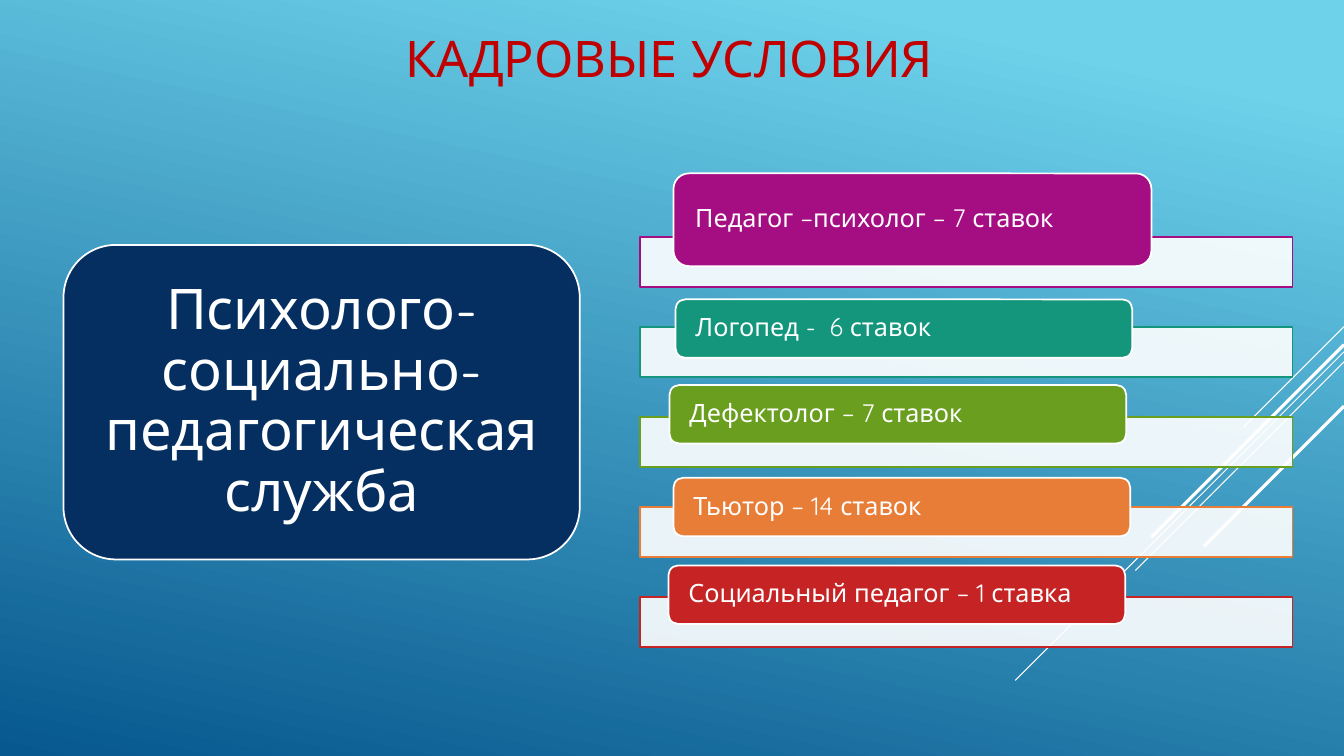
from lxml import etree
from pptx import Presentation
from pptx.dml.color import RGBColor
from pptx.enum.shapes import MSO_CONNECTOR, MSO_SHAPE
from pptx.enum.text import MSO_ANCHOR, PP_ALIGN
from pptx.oxml.ns import qn
from pptx.util import Inches, Pt

STRAIGHT = MSO_CONNECTOR.STRAIGHT
RECTANGLE, ROUNDED = MSO_SHAPE.RECTANGLE, MSO_SHAPE.ROUNDED_RECTANGLE
MIDDLE = MSO_ANCHOR.MIDDLE
LEFT, CENTER = PP_ALIGN.LEFT, PP_ALIGN.CENTER

FONT = "Quicksand"
WHITE, NAVY, TITLE_RED = "FFFFFF", "052F61", "C00000"
SLIDE_WIDTH, SLIDE_HEIGHT = 13.33, 7.5
GRADIENT = [(0.1, "6ED2EB"), (1, "06588E")]
GRADIENT_ANGLE = 258

TITLE = "КАДРОВЫЕ УСЛОВИЯ"
SERVICE = "Психолого-социально-педагогическая служба"
# text, colour, left, top, width, height of the label
STAFF = [
    ("Педагог –психолог – 7 ставок", "A50E82", 6.68, 1.72, 4.74, 0.92),
    ("Логопед -  6 ставок", "14967C", 6.7, 2.97, 4.53, 0.58),
    ("Дефектолог – 7 ставок", "6A9E1F", 6.64, 3.82, 4.53, 0.58),
    ("Тьютор – 14 ставок", "E87D37", 6.68, 4.74, 4.53, 0.58),
    ("Социальный педагог – 1 ставка", "C62324", 6.63, 5.61, 4.53, 0.58),
]
BAR_LEFT, BAR_WIDTH, BAR_HEIGHT = 6.35, 6.47, 0.5
FIRST_BAR, LAST_BAR = 2.35, 5.92
# start height at the right edge, horizontal run, line width
RAYS = [
    (3.24, 1, 0.75),
    (3.49, 3.26, 0.75),
    (3.59, 2.07, 0.75),
    (3.42, 1.91, 2.25),
    (4.03, 1.39, 2.25),
]


def color(value):
    return RGBColor.from_string(value)


def write(frame, text, size, ink, align, inset, line_spacing=0.9):
    frame_format = {"word_wrap": True, "vertical_anchor": MIDDLE,
                    "margin_left": Inches(inset), "margin_right": Inches(inset),
                    "margin_top": 0, "margin_bottom": 0}
    for name, value in frame_format.items():
        setattr(frame, name, value)
    para = frame.paragraphs[0]
    para.alignment = align
    para.line_spacing = line_spacing
    span = para.add_run()
    span.text = text
    for name, value in {"name": FONT, "size": Pt(size), "bold": False}.items():
        setattr(span.font, name, value)
    span.font.color.rgb = color(ink)


def add_box(page, kind, place, fill, outline):
    box = page.shapes.add_shape(kind, *map(Inches, place))
    box.shadow.inherit = False
    box.fill.solid()
    box.fill.fore_color.rgb = color(fill)
    box.line.color.rgb = color(outline)
    box.line.width = Pt(1.25)
    return box


def set_opacity(box, percent):
    fill_color = box.fill._xPr.find(qn("a:solidFill"))[0]
    etree.SubElement(fill_color, qn("a:alpha"), val=str(percent * 1000))


def add_ray(page, top, run, width):
    """Draw a line that falls at 45 degrees from the right slide edge."""
    ends = (SLIDE_WIDTH, top, SLIDE_WIDTH - run, top + run)
    ray = page.shapes.add_connector(STRAIGHT, *map(Inches, ends))
    ray.line.color.rgb = color(WHITE)
    ray.line.width = Pt(width)
    etree.SubElement(ray._element.spPr, qn("a:effectLst"))


def paint_background(page):
    fill = page.background.fill
    fill.gradient()
    fill.gradient_angle = GRADIENT_ANGLE
    for stop, (position, value) in zip(fill.gradient_stops, GRADIENT):
        stop.position = position
        stop.color.rgb = color(value)


def add_title(page):
    title = page.shapes.title
    place = {"left": 0.64, "top": 0.21, "width": 12, "height": 0.79}
    for name, value in place.items():
        setattr(title, name, Inches(value))
    write(title.text_frame, TITLE, 36, TITLE_RED, CENTER, 0.1)


def add_staff(page):
    pitch = (LAST_BAR - FIRST_BAR) / (len(STAFF) - 1)
    for index, (text, tone, *place) in enumerate(STAFF):
        bar_place = (BAR_LEFT, FIRST_BAR + index * pitch, BAR_WIDTH, BAR_HEIGHT)
        bar = add_box(page, RECTANGLE, bar_place, WHITE, tone)
        set_opacity(bar, 90)
        label = add_box(page, ROUNDED, place, tone, WHITE)
        write(label.text_frame, text, 18, WHITE, LEFT, 0.17)


def main():
    deck = Presentation()
    deck.slide_width = Inches(SLIDE_WIDTH)
    deck.slide_height = Inches(SLIDE_HEIGHT)
    page = deck.slides.add_slide(deck.slide_layouts[5])
    paint_background(page)
    for ray in RAYS:
        add_ray(page, *ray)
    add_title(page)
    add_staff(page)
    service = add_box(page, ROUNDED, (0.63, 2.43, 5.12, 3.12), NAVY, WHITE)
    write(service.text_frame, SERVICE, 40, WHITE, CENTER, 0.17)
    deck.save("out.pptx")


if __name__ == "__main__":
    main()
